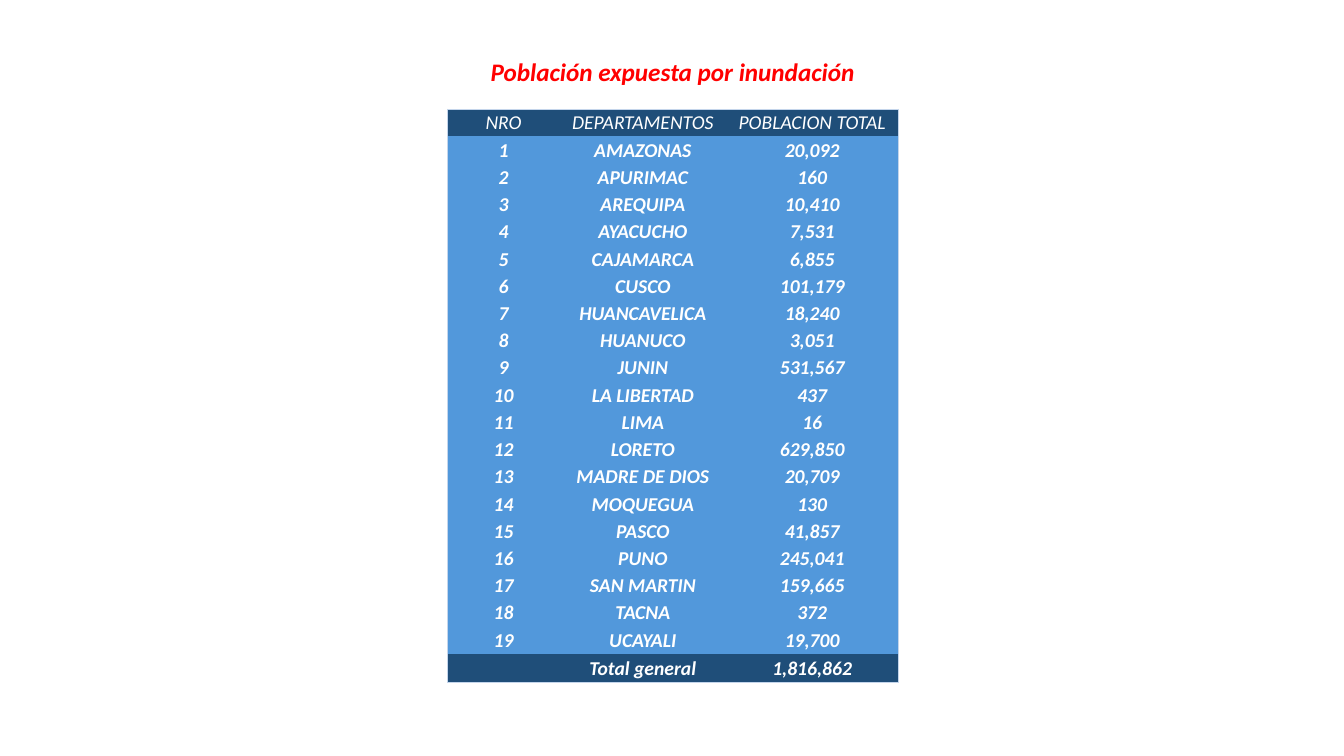
from lxml import etree
from pptx import Presentation
from pptx.dml.color import RGBColor
from pptx.enum import text
from pptx.oxml import ns
from pptx.util import Pt

RED = RGBColor(0xFF, 0x00, 0x00)
WHITE = RGBColor(0xFF, 0xFF, 0xFF)
NAVY = RGBColor(0x1F, 0x4E, 0x79)
BLUE = RGBColor(0x52, 0x98, 0xDB)
PALE = RGBColor(0xC4, 0xD5, 0xEB)

TITLE = "Población expuesta por inundación"
HEAD = ("NRO", "DEPARTAMENTOS", "POBLACION TOTAL")
PEOPLE = {
    "AMAZONAS": 20092, "APURIMAC": 160, "AREQUIPA": 10410,
    "AYACUCHO": 7531, "CAJAMARCA": 6855, "CUSCO": 101179,
    "HUANCAVELICA": 18240, "HUANUCO": 3051, "JUNIN": 531567,
    "LA LIBERTAD": 437, "LIMA": 16, "LORETO": 629850,
    "MADRE DE DIOS": 20709, "MOQUEGUA": 130, "PASCO": 41857,
    "PUNO": 245041, "SAN MARTIN": 159665, "TACNA": 372,
    "UCAYALI": 19700,
}
WIDTHS = (80, 119, 123)
ROW = 19.47


def write(frame, words, size=14, color=WHITE, bold=True):
    par = frame.paragraphs[0]
    par.alignment = text.PP_ALIGN.CENTER
    run = par.add_run()
    run.text = words
    font = run.font
    font.name, font.size = "Calibri", Pt(size)
    font.bold, font.italic = bold, True
    font.color.rgb = color


def border(cell, sides):
    """Draw a pale line on the given sides and none on the others."""
    props = cell._tc.get_or_add_tcPr()
    for spot, side in enumerate("LRTB"):
        line = etree.Element(ns.qn(f"a:ln{side}"), w=str(Pt(0.5)))
        if side in sides:
            fill = etree.SubElement(line, ns.qn("a:solidFill"))
            etree.SubElement(fill, ns.qn("a:srgbClr"), val=str(PALE))
        else:
            etree.SubElement(line, ns.qn("a:noFill"))
        props.insert(spot, line)


def add_title(slide):
    title = slide.shapes.title
    title.left, title.top = Pt(342), Pt(36.7)
    title.width, title.height = Pt(277), Pt(29)
    frame = title.text_frame
    frame.word_wrap = False
    frame.auto_size = text.MSO_AUTO_SIZE.NONE
    frame.vertical_anchor = text.MSO_ANCHOR.MIDDLE
    write(frame, TITLE, size=18, color=RED)


def add_grid(slide, rows):
    last, end = len(rows) - 1, len(WIDTHS) - 1
    grid = slide.shapes.add_table(
        len(rows), len(WIDTHS), Pt(319.7), Pt(78),
        Pt(sum(WIDTHS)), Pt(ROW * len(rows))).table
    grid.horz_banding = False
    for col, width in zip(grid.columns, WIDTHS):
        col.width = Pt(width)
    for r, row in enumerate(rows):
        grid.rows[r].height = Pt(ROW)
        for c, words in enumerate(row):
            cell = grid.cell(r, c)
            cell.margin_left = cell.margin_right = cell.margin_top = Pt(0.5)
            cell.margin_bottom = 0
            cell.vertical_anchor = text.MSO_ANCHOR.MIDDLE
            cell.fill.solid()
            cell.fill.fore_color.rgb = NAVY if r in (0, last) else BLUE
            edges = {"L": c == 0, "R": c == end, "T": r == 0, "B": r == last}
            border(cell, [side for side, on in edges.items() if on])
            write(cell.text_frame, words, bold=r > 0)


def main():
    deck = Presentation()
    deck.slide_width, deck.slide_height = Pt(960), Pt(540)
    slide = deck.slides.add_slide(deck.slide_layouts[5])
    add_title(slide)
    body = [(str(n), name, f"{count:,}")
            for n, (name, count) in enumerate(PEOPLE.items(), 1)]
    total = ("", "Total general", f"{sum(PEOPLE.values()):,}")
    add_grid(slide, [HEAD, *body, total])
    deck.save("out.pptx")


if __name__ == "__main__":
    main()
